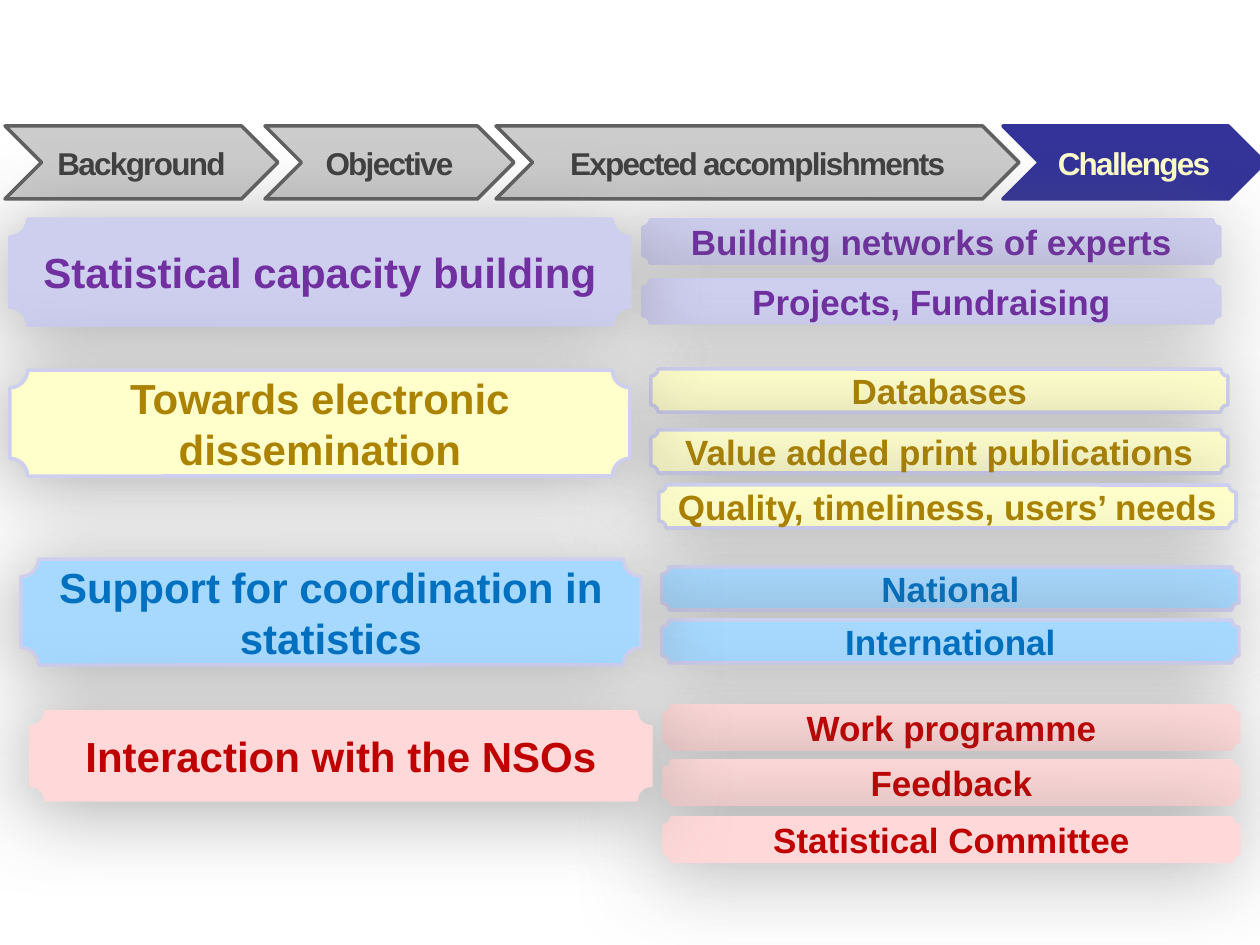
from dataclasses import dataclass

from lxml.etree import SubElement
from pptx import Presentation
from pptx.dml.color import RGBColor
from pptx.enum.shapes import MSO_SHAPE
from pptx.enum.text import MSO_ANCHOR, PP_ALIGN
from pptx.oxml.ns import qn
from pptx.util import Pt

SCALE = 914400 / 126


def px(n):
    return round(n * SCALE)


@dataclass(frozen=True)
class Tone:
    fill: str
    line: str
    ink: str


@dataclass(frozen=True)
class Theme:
    font: str = "Arial"
    step: int = 18
    bar: int = 20
    head: int = 24
    edge: int = 2
    shade: str = "606060"
    idle: Tone = Tone("CCCCCC", "606060", "404040")
    live: Tone = Tone("333399", "333399", "FFFFCC")
    violet: Tone = Tone("CECEEF", "CECEEF", "7030A0")
    yellow: Tone = Tone("FFFFCC", "CECEEF", "AC8300")
    blue: Tone = Tone("A7D9FF", "CECEEF", "0070C0")
    red: Tone = Tone("FFD9D9", "FFD9D9", "C00000")


THEME = Theme()

STEPS = [
    ("Objective", 260, 249, THEME.idle),
    ("Expected accomplishments", 491, 523, THEME.idle),
    ("Challenges", 998, 262, THEME.live),
    ("Background", 0, 273, THEME.idle),
]

TOPICS = [
    ("Statistical capacity building", THEME.violet, (10, 219, 620, 106),
     (643, 220, 577, 43),
     [("Building networks of experts", 0, 0), ("Projects, Fundraising", 0, 60)]),
    ("Towards electronic dissemination", THEME.yellow, (10, 370, 620, 106),
     (651, 369, 577, 43),
     [("Databases", 0, 0), ("Value added print publications", 0, 61),
      ("Quality, timeliness, users’ needs", 8, 116)]),
    ("Support for coordination in statistics", THEME.blue, (21, 559, 620, 106),
     (662, 567, 577, 43),
     [("National", 0, 0), ("International", 0, 53)]),
    ("Interaction with the NSOs", THEME.red, (31, 712, 620, 88),
     (664, 706, 575, 43),
     [("Work programme", 0, 0), ("Feedback", 0, 55),
      ("Statistical Committee", 0, 112)]),
]


def block(slide, kind, box, text, size, tone):
    shape = slide.shapes.add_shape(kind, *map(px, box))
    shape.shadow.inherit = False
    shape.fill.solid()
    shape.fill.fore_color.rgb = RGBColor.from_string(tone.fill)
    shape.line.color.rgb = RGBColor.from_string(tone.line)
    shape.line.width = Pt(THEME.edge)
    frame = shape.text_frame
    frame.word_wrap = True
    frame.vertical_anchor = MSO_ANCHOR.MIDDLE
    para = frame.paragraphs[0]
    para.text = text
    para.alignment = PP_ALIGN.CENTER
    font = para.font
    font.name = THEME.font
    font.size = Pt(size)
    font.bold = True
    font.color.rgb = RGBColor.from_string(tone.ink)
    return shape


def plaque(slide, box, text, size, tone):
    shape = block(slide, MSO_SHAPE.PLAQUE, box, text, size, tone)
    effect = shape.element.spPr.find(qn("a:effectLst"))
    shadow = SubElement(effect, qn("a:outerShdw"), blurRad=str(Pt(50)),
                        dist=str(Pt(5)), dir=str(128 * 60000),
                        algn="ctr", rotWithShape="0")
    color = SubElement(shadow, qn("a:srgbClr"), val=THEME.shade)
    SubElement(color, qn("a:alpha"), val="52000")


def steps(slide, box):
    left, top, _, high = box
    for text, x, wide, tone in STEPS:
        shape = block(slide, MSO_SHAPE.CHEVRON, (left + x, top, wide, high),
                      text, THEME.step, tone)
        frame = shape.text_frame
        frame.margin_left = frame.margin_right = px(5)
        frame.margin_top = frame.margin_bottom = px(6)
        run = frame.paragraphs[0].runs[0]
        run.font.bold = True
        run.font._element.set("spc", "-100")


def bars(slide, box, tone, items):
    left, top, wide, high = box
    for text, x, y in items:
        plaque(slide, (left + x, top + y, wide, high), text, THEME.bar, tone)


def main():
    deck = Presentation()
    deck.slide_width = px(1260)
    deck.slide_height = px(945)
    slide = deck.slides.add_slide(deck.slide_layouts[6])
    steps(slide, (5, 126, 1260, 73))
    for _, tone, _, box, items in TOPICS:
        bars(slide, box, tone, items)
    for text, tone, box, _, _ in TOPICS:
        plaque(slide, box, text, THEME.head, tone)
    deck.save("out.pptx")


if __name__ == "__main__":
    main()
